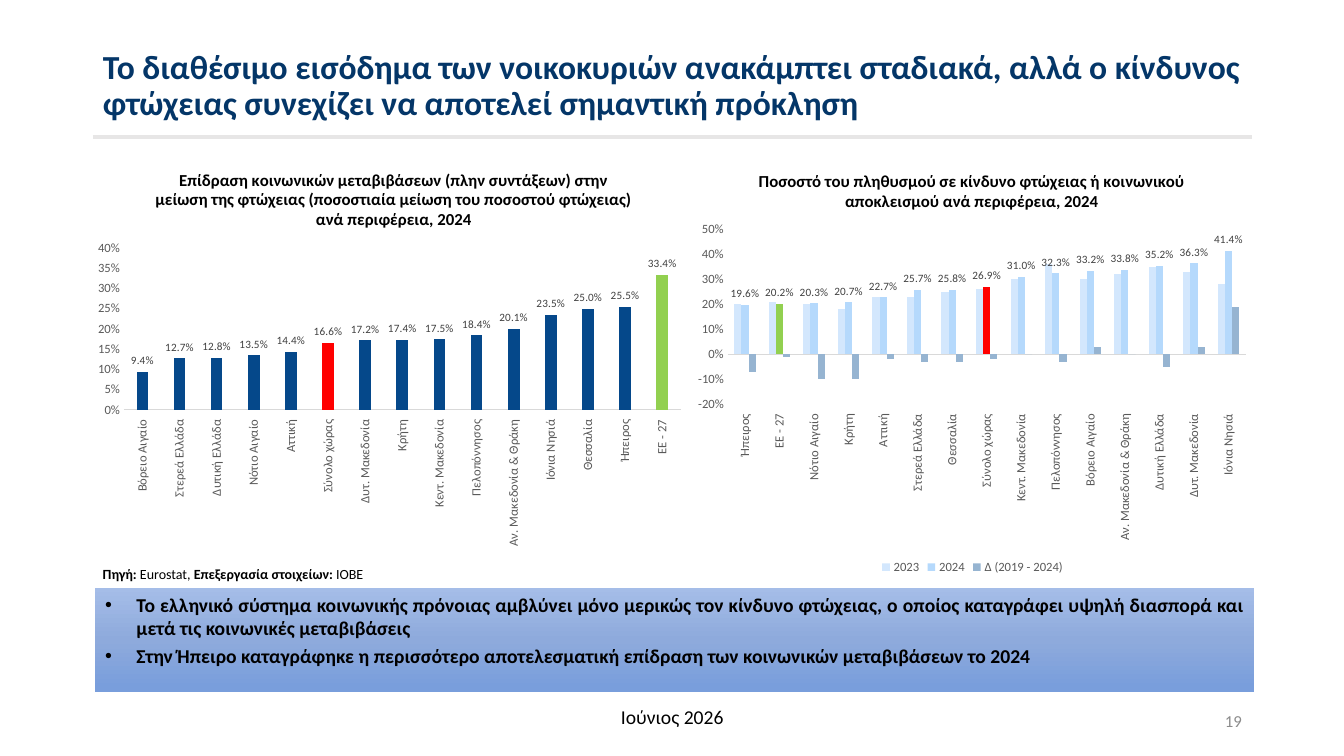
from copy import deepcopy
from lxml.etree import SubElement
from pptx import Presentation
from pptx.chart.data import CategoryChartData
from pptx.dml.color import RGBColor
from pptx.enum.chart import XL_CHART_TYPE, XL_LABEL_POSITION, XL_LEGEND_POSITION, XL_TICK_LABEL_POSITION, XL_TICK_MARK
from pptx.enum.shapes import MSO_CONNECTOR, MSO_SHAPE
from pptx.enum.text import MSO_ANCHOR, PP_ALIGN
from pptx.oxml.ns import qn
from pptx.util import Cm, Pt

FONT = "Calibri"
COLORS = {
    "title": "043668", "rule": "E7E6E6", "text": "000000", "page": "8C8C8C",
    "axis": "595959", "line": "D9D9D9", "label": "404040", "navy": "05488A",
    "red": "FF0000", "green": "92D050", "pale": "D3E7FD", "sky": "B5D9FC", "steel": "96B4D1",
}
TITLE = "Το διαθέσιμο εισόδημα των νοικοκυριών ανακάμπτει σταδιακά, αλλά ο κίνδυνος φτώχειας συνεχίζει να αποτελεί σημαντική πρόκληση"
POINTS = [
    "Το ελληνικό σύστημα κοινωνικής πρόνοιας αμβλύνει μόνο μερικώς τον κίνδυνο φτώχειας, ο οποίος καταγράφει υψηλή διασπορά και μετά τις κοινωνικές μεταβιβάσεις",
    "Στην Ήπειρο καταγράφηκε η περισσότερο αποτελεσματική επίδραση των κοινωνικών μεταβιβάσεων το 2024",
]
SOURCE = [("Πηγή: ", True), ("Eurostat, ", False), ("Επεξεργασία στοιχείων:", True), (" ΙΟΒΕ", False)]
SHADES = [(0, "A5BDE8"), (50, "8EAADC"), (95, "799EDC"), (100, "799EDC")]
MARKS = {"Σύνολο χώρας": "red", "ΕΕ - 27": "green"}
CHARTS = [
    {
        "title": "Επίδραση κοινωνικών μεταβιβάσεων (πλην συντάξεων) στην μείωση της φτώχειας (ποσοστιαία μείωση του ποσοστού φτώχειας) ανά περιφέρεια, 2024",
        "box": (2.16, 3.76, 15.29, 10.06), "plot": (0.063, 0.248, 0.918, 0.405), "head": (0.11, 0.04),
        "scale": (0, 0.4, 0.05), "gap": 219, "overlap": -27, "main": "Series 1",
        "cats": ["Βόρειο Αιγαίο", "Στερεά Ελλάδα", "Δυτική Ελλάδα", "Νότιο Αιγαίο", "Αττική", "Σύνολο χώρας", "Δυτ. Μακεδονία", "Κρήτη",
                 "Κεντ. Μακεδονία", "Πελοπόννησος", "Αν. Μακεδονία & Θράκη", "Ιόνια Νησιά", "Θεσσαλία", "Ήπειρος", "ΕΕ - 27"],
        "series": [("Series 1", "navy", [0.094, 0.127, 0.128, 0.135, 0.144, 0.166, 0.172, 0.174, 0.175, 0.184, 0.201, 0.235, 0.25, 0.255, 0.334])],
    },
    {
        "title": "Ποσοστό του πληθυσμού σε κίνδυνο φτώχειας ή κοινωνικού αποκλεισμού ανά περιφέρεια, 2024",
        "box": (17.32, 3.76, 14.38, 10.82), "plot": (0.071, 0.186, 0.908, 0.408), "head": (0.12, 0.04),
        "scale": (-0.2, 0.5, 0.1), "gap": 182, "overlap": 0, "main": "2024",
        "cats": ["Ήπειρος", "ΕΕ - 27", "Νότιο Αιγαίο", "Κρήτη", "Αττική", "Στερεά Ελλάδα", "Θεσσαλία", "Σύνολο χώρας", "Κεντ. Μακεδονία",
                 "Πελοπόννησος", "Βόρειο Αιγαίο", "Αν. Μακεδονία & Θράκη", "Δυτική Ελλάδα", "Δυτ. Μακεδονία", "Ιόνια Νησιά"],
        "series": [
            ("2023", "pale", [0.2, 0.21, 0.2, 0.18, 0.23, 0.23, 0.25, 0.26, 0.3, 0.36, 0.3, 0.32, 0.35, 0.33, 0.28]),
            ("2024", "sky", [0.196, 0.202, 0.203, 0.207, 0.227, 0.257, 0.258, 0.269, 0.31, 0.323, 0.332, 0.338, 0.352, 0.363, 0.414]),
            ("Δ (2019 - 2024)", "steel", [-0.07, -0.01, -0.1, -0.1, -0.02, -0.03, -0.03, -0.02, 0, -0.03, 0.03, 0, -0.05, 0.03, 0.19]),
        ],
    },
]


def tint(name):
    return RGBColor.from_string(COLORS[name])


def style(font, size, color, bold=False):
    font.name, font.size, font.bold = FONT, Pt(size), bold
    font.color.rgb = tint(color)


def paint(fill, color):
    fill.solid()
    fill.fore_color.rgb = tint(color)


def place(holder, values):
    old = holder.find(qn("c:layout"))
    if old is not None:
        holder.remove(old)
    layout = SubElement(holder, qn("c:layout"))
    manual = SubElement(layout, qn("c:manualLayout"))
    if len(values) == 4:
        SubElement(manual, qn("c:layoutTarget")).set("val", "inner")
    for mode in ("xMode", "yMode"):
        SubElement(manual, qn("c:" + mode)).set("val", "edge")
    for key, value in zip("xywh", values):
        SubElement(manual, qn("c:" + key)).set("val", str(value))
    holder.remove(layout)
    spot = 1 if holder.find(qn("c:tx")) is not None else 0
    holder.insert(spot, layout)


def write(slide, box, runs, size, color, align):
    frame = slide.shapes.add_textbox(*map(Cm, box)).text_frame
    frame.word_wrap = True
    para = frame.paragraphs[0]
    para.alignment = align
    for text, bold in runs:
        run = para.add_run()
        run.text = text
        style(run.font, size, color, bold)
    return frame


def draw(slide, spec):
    data = CategoryChartData()
    data.categories = spec["cats"]
    for name, color, values in spec["series"]:
        data.add_series(name, values)
    chart = slide.shapes.add_chart(XL_CHART_TYPE.COLUMN_CLUSTERED, *map(Cm, spec["box"]), data).chart
    style(chart.font, 10, "text")
    chart.has_title = True
    head = chart.chart_title
    head.text_frame.text = spec["title"]
    style(head.text_frame.paragraphs[0].runs[0].font, 12, "text", True)
    place(head._element, spec["head"])
    place(chart._chartSpace.chart.plotArea, spec["plot"])

    cat, val = chart.category_axis, chart.value_axis
    for axis in (cat, val):
        axis.has_major_gridlines = False
        axis.major_tick_mark = axis.minor_tick_mark = XL_TICK_MARK.NONE
        style(axis.tick_labels.font, 9, "axis")
    cat.tick_label_position = XL_TICK_LABEL_POSITION.LOW
    cat.format.line.color.rgb = tint("line")
    cat.format.line.width = Pt(0.75)
    cat._element.find(qn("c:txPr")).find(qn("a:bodyPr")).set("rot", "-5400000")
    val.format.line.fill.background()
    val.minimum_scale, val.maximum_scale, val.major_unit = spec["scale"]
    val.tick_labels.number_format = "0%"
    val.tick_labels.number_format_is_linked = False

    plot = chart.plots[0]
    plot.vary_by_categories = False
    plot.gap_width, plot.overlap = spec["gap"], spec["overlap"]
    for series, (name, color, values) in zip(plot.series, spec["series"]):
        paint(series.format.fill, color)
        series.invert_if_negative = False
        if name == spec["main"]:
            for region, mark in MARKS.items():
                paint(series.points[spec["cats"].index(region)].format.fill, mark)
            labels = series.data_labels
            labels.show_value = True
            labels.position = XL_LABEL_POSITION.OUTSIDE_END
            labels.number_format = "0.0%"
            labels.number_format_is_linked = False
            style(labels.font, 8, "label")
    chart.has_legend = len(spec["series"]) > 1
    if chart.has_legend:
        chart.legend.position = XL_LEGEND_POSITION.BOTTOM
        chart.legend.include_in_layout = False
        style(chart.legend.font, 9, "axis")


def panel(slide):
    box = slide.shapes.add_shape(MSO_SHAPE.RECTANGLE, Cm(2.4), Cm(14.81), Cm(29.21), Cm(2.64))
    box.shadow.inherit = False
    box.line.fill.background()
    box.fill.gradient()
    box.fill.gradient_angle = 270
    stops = box._element.spPr.find(qn("a:gradFill")).find(qn("a:gsLst"))
    for stop in list(stops)[1:]:
        stops.remove(stop)
    for _ in SHADES[1:]:
        stops.append(deepcopy(stops[0]))
    for stop, (spot, color) in zip(box.fill.gradient_stops, SHADES):
        stop.position = spot / 100
        stop.color.rgb = RGBColor.from_string(color)
    frame = box.text_frame
    frame.word_wrap = True
    frame.vertical_anchor = MSO_ANCHOR.TOP
    frame.text = "\n".join(POINTS)
    for row, para in enumerate(frame.paragraphs):
        para.alignment = PP_ALIGN.JUSTIFY
        para.space_before = Pt(3 if row else 0)
        props = para._p.get_or_add_pPr()
        props.set("marL", str(Cm(0.79)))
        props.set("indent", str(-Cm(0.79)))
        SubElement(props, qn("a:buFont")).set("typeface", "Arial")
        SubElement(props, qn("a:buChar")).set("char", "•")
        style(para.runs[0].font, 14, "text", True)


def main():
    deck = Presentation()
    deck.slide_width, deck.slide_height = Cm(33.87), Cm(19.05)
    slide = deck.slides.add_slide(deck.slide_layouts[5])
    title = slide.shapes.title
    title.left, title.top, title.width, title.height = map(Cm, (2.34, 1.02, 29.21, 2.34))
    frame = title.text_frame
    frame.text = TITLE
    frame.word_wrap = True
    frame.vertical_anchor = MSO_ANCHOR.MIDDLE
    para = frame.paragraphs[0]
    para.alignment, para.line_spacing = PP_ALIGN.LEFT, 0.9
    style(para.runs[0].font, 24, "title", True)

    rule = slide.shapes.add_connector(MSO_CONNECTOR.STRAIGHT, Cm(2.34), Cm(3.45), Cm(31.55), Cm(3.45))
    rule.line.color.rgb = tint("rule")
    rule.line.width = Pt(3)
    SubElement(rule._element.spPr, qn("a:effectLst"))

    for spec in CHARTS:
        draw(slide, spec)
    panel(slide)
    source = write(slide, (2.34, 14.05, 11.43, 1.02), SOURCE, 10, "text", PP_ALIGN.JUSTIFY)
    source.paragraphs[0].line_spacing = 1.15
    write(slide, (11.23, 17.65, 11.43, 1.02), [("Ιούνιος 2026", False)], 14, "text", PP_ALIGN.CENTER)
    page = write(slide, (23.93, 17.65, 7.62, 1.02), [("19", False)], 12, "page", PP_ALIGN.RIGHT)
    page.vertical_anchor = MSO_ANCHOR.MIDDLE
    deck.save("out.pptx")


if __name__ == "__main__":
    main()
